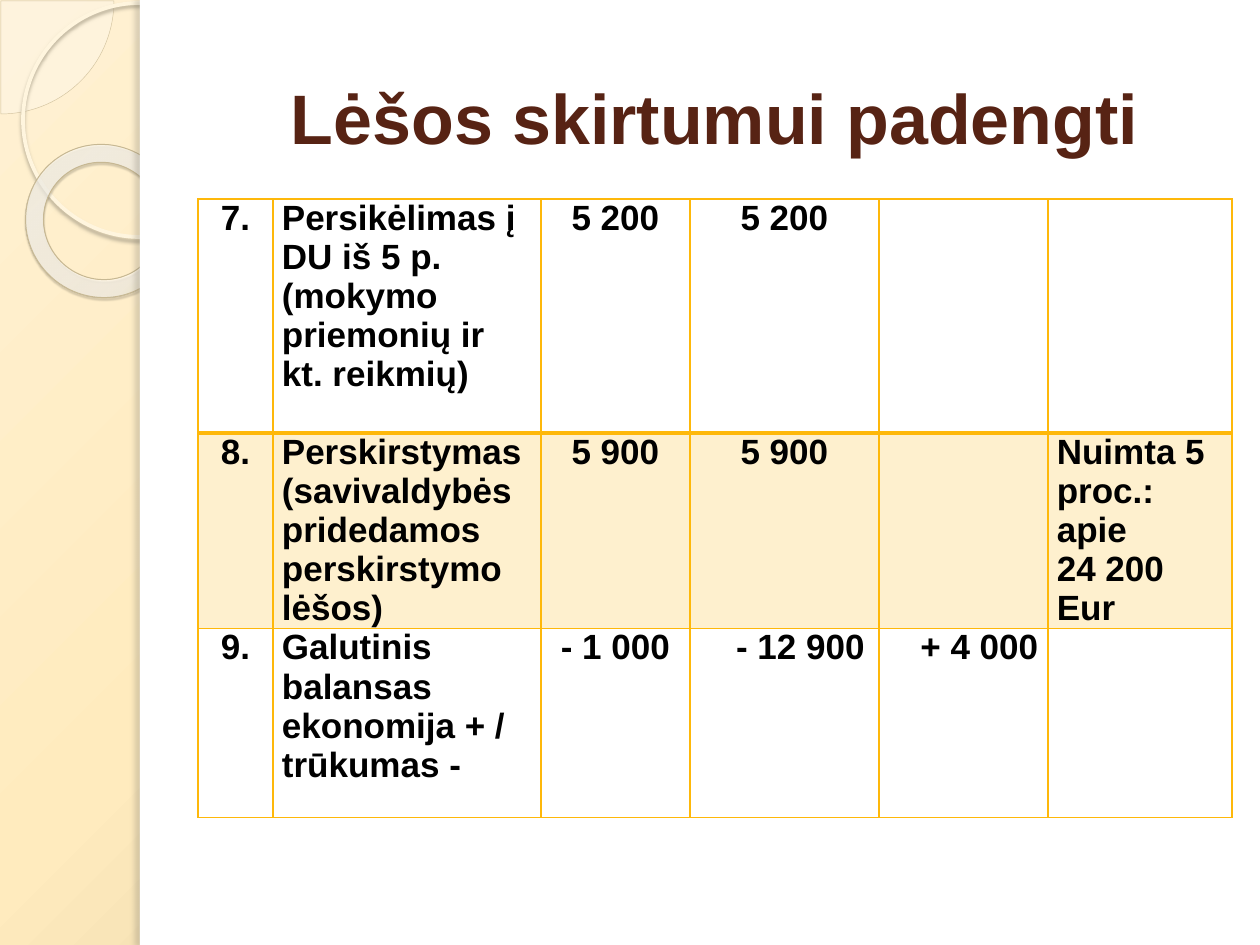
"""Build the slide on funds for covering the shortfall."""
from dataclasses import dataclass
from typing import Optional

from lxml import etree
from pptx import Presentation
from pptx.dml.color import RGBColor
from pptx.enum.shapes import MSO_SHAPE
from pptx.enum.text import MSO_ANCHOR, PP_ALIGN
from pptx.oxml.ns import qn
from pptx.util import Emu, Pt

PIE, OVAL, DONUT, RECT = (MSO_SHAPE.PIE, MSO_SHAPE.OVAL, MSO_SHAPE.DONUT,
                          MSO_SHAPE.RECTANGLE)
LEFT, CENTER = PP_ALIGN.LEFT, PP_ALIGN.CENTER
MIDDLE, TOP = MSO_ANCHOR.MIDDLE, MSO_ANCHOR.TOP
TITLE_ONLY = 5
FONT = "Arial"
COLORS = {
    "title": "572314", "text": "000000", "accent": "FEB80A", "panel": "FFFFFF",
    "pie": "FEFAF4", "pie_line": "D3C39F", "circle": "FFF5DE",
    "circle_shadow": "B0A68F", "ring_line": "C7B893", "ring_shadow": "5A5444",
    "edge_shadow": "736F63", "cream": "FFF1D3", "sand": "FFEBBE",
    "khaki": "C9B484", "ivory": "FFFCF6", "milk": "FFFEFB", "gold": "F0D28E",
}


@dataclass(frozen=True)
class Gradient:
    stops: tuple
    focus: tuple


@dataclass(frozen=True)
class Shadow:
    color: str
    alpha: int
    blur: float
    distance: float
    angle: int


@dataclass(frozen=True)
class Ornament:
    preset: MSO_SHAPE
    box: tuple
    fill: Optional[str] = None
    alpha: int = 100
    line: Optional[str] = None
    weight: float = 0
    rotation: float = 0
    adjustments: tuple = ()
    gradient: Optional[Gradient] = None
    shadow: Optional[Shadow] = None


@dataclass(frozen=True)
class Entry:
    text: str = ""
    align: PP_ALIGN = CENTER
    indent: int = 0


BACKDROP = Gradient((("cream", 0, 100), ("sand", 40, 100), ("khaki", 100, 100)),
                    (-24, -20, 124, 120))
RING = Gradient((("ivory", 0, 70), ("milk", 70, 55), ("gold", 100, 60)),
                (-408, -50, 508, 150))
ORNAMENTS = [
    Ornament(PIE, (-112, -112, 226, 226), "pie", 33, "pie_line", 0.25,
             adjustments=(0, 54.021)),
    Ornament(OVAL, (23, 3, 234, 234), line="circle", weight=2.15,
             shadow=Shadow("circle_shadow", 85, 2, 2, 90)),
    Ornament(DONUT, (25, 145, 155, 152), line="ring_line", weight=0.58,
             rotation=38.6, adjustments=(0.118,), gradient=RING,
             shadow=Shadow("ring_shadow", 35, 1, 1.2, 75)),
    Ornament(RECT, (140, 0, 1120, 945), "panel"),
    Ornament(RECT, (140, 0, 10, 945), "panel",
             shadow=Shadow("edge_shadow", 25, 3, 3, 180)),
]
COLUMNS = (75, 268, 149, 189, 169, 184)
ROW_HEIGHTS = (234, 195, 189)
ROWS = [
    [Entry("7."),
     Entry("Persikėlimas į DU iš 5 p. (mokymo priemonių ir kt. reikmių)", LEFT),
     Entry("5 200"), Entry("5 200"), Entry(), Entry()],
    [Entry("8."),
     Entry("Perskirstymas (savivaldybės pridedamos perskirstymo lėšos)", LEFT),
     Entry("5 900"), Entry("5 900"), Entry(),
     Entry("Nuimta 5 proc.: apie\n24 200 Eur", LEFT)],
    [Entry("9."), Entry("Galutinis balansas ekonomija + / trūkumas -", LEFT),
     Entry("- 1 000"), Entry("- 12 900", indent=32),
     Entry("+ 4 000", indent=32), Entry()],
]


def px(length: int) -> Emu:
    return Emu(round(length * 914400 / 126))


def rgb(name: str) -> RGBColor:
    return RGBColor.from_string(COLORS[name])


def add_color(parent, name: str, alpha: int = 100) -> None:
    color = etree.SubElement(parent, qn("a:srgbClr"), val=COLORS[name])
    if alpha < 100:
        etree.SubElement(color, qn("a:alpha"), val=str(alpha * 1000))


def set_alpha(fill_owner, alpha: int) -> None:
    color = fill_owner.find(qn("a:solidFill")).find(qn("a:srgbClr"))
    etree.SubElement(color, qn("a:alpha"), val=str(alpha * 1000))


def apply_gradient(fill, owner, gradient: Gradient) -> None:
    fill.gradient()
    element = owner.find(".//" + qn("a:gradFill"))
    for child in list(element):
        element.remove(child)
    stops = etree.SubElement(element, qn("a:gsLst"))
    for name, position, alpha in gradient.stops:
        stop = etree.SubElement(stops, qn("a:gs"), pos=str(position * 1000))
        add_color(stop, name, alpha)
    shade = etree.SubElement(element, qn("a:path"), {"path": "circle"})
    sides = {side: str(value * 1000) for side, value in zip("ltrb", gradient.focus)}
    etree.SubElement(shade, qn("a:fillToRect"), sides)


def add_shadow(properties, shadow: Shadow) -> None:
    effects = properties.find(qn("a:effectLst"))
    outer = etree.SubElement(
        effects, qn("a:outerShdw"), blurRad=str(Pt(shadow.blur)),
        dist=str(Pt(shadow.distance)), dir=str(shadow.angle * 60000),
        algn="tl", rotWithShape="0")
    add_color(outer, shadow.color, shadow.alpha)


def draw_ornament(slide, item: Ornament) -> None:
    shape = slide.shapes.add_shape(item.preset, *map(px, item.box))
    shape.rotation = item.rotation
    for index, value in enumerate(item.adjustments):
        shape.adjustments[index] = value
    properties = shape._element.spPr
    if item.gradient:
        apply_gradient(shape.fill, properties, item.gradient)
    elif item.fill:
        shape.fill.solid()
        shape.fill.fore_color.rgb = rgb(item.fill)
        if item.alpha < 100:
            set_alpha(properties, item.alpha)
    else:
        shape.fill.background()
    if item.line:
        shape.line.color.rgb = rgb(item.line)
        shape.line.width = Pt(item.weight)
    else:
        shape.line.fill.background()
    shape.shadow.inherit = False
    if item.shadow:
        add_shadow(properties, item.shadow)


def write(frame, text: str, *, size: int, color: str, align: PP_ALIGN,
          indent: int = 0) -> None:
    frame.text = text
    for paragraph in frame.paragraphs:
        paragraph.alignment = align
        if indent:
            paragraph._p.get_or_add_pPr().set("marL", str(px(indent)))
        font = paragraph.font
        font.name, font.size, font.bold = FONT, Pt(size), True
        font.color.rgb = rgb(color)


def add_border(properties, side: str, weight: float) -> None:
    line = etree.SubElement(properties, qn(f"a:ln{side}"), w=str(Pt(weight)))
    add_color(etree.SubElement(line, qn("a:solidFill")), "accent")


def fill_cell(cell, entry: Entry, row: int) -> None:
    properties = cell._tc.get_or_add_tcPr()
    weights = {"L": 1, "R": 1, "T": 2 if row == 1 else 1, "B": 2 if row == 0 else 1}
    for side, weight in weights.items():
        add_border(properties, side, weight)
    if row == 1:
        cell.fill.solid()
        cell.fill.fore_color.rgb = rgb("accent")
        set_alpha(properties, 20)
    else:
        cell.fill.background()
    cell.margin_left = cell.margin_right = px(9)
    cell.margin_top = cell.margin_bottom = 0
    cell.vertical_anchor = TOP
    write(cell.text_frame, entry.text, size=20, color="text",
          align=entry.align, indent=entry.indent)


def draw_table(slide) -> None:
    table = slide.shapes.add_table(
        len(ROWS), len(COLUMNS), px(198), px(199),
        px(sum(COLUMNS)), px(sum(ROW_HEIGHTS))).table
    table.first_row = table.horz_banding = False
    for column, width in zip(table.columns, COLUMNS):
        column.width = px(width)
    for row, (height, entries) in enumerate(zip(ROW_HEIGHTS, ROWS)):
        table.rows[row].height = px(height)
        for column, entry in enumerate(entries):
            fill_cell(table.cell(row, column), entry, row)


def main() -> None:
    deck = Presentation()
    deck.slide_width, deck.slide_height = px(1260), px(945)
    slide = deck.slides.add_slide(deck.slide_layouts[TITLE_ONLY])
    apply_gradient(slide.background.fill, slide._element, BACKDROP)
    for item in ORNAMENTS:
        draw_ornament(slide, item)
    title = slide.shapes.title
    title.left, title.top, title.width, title.height = map(px, (198, 38, 1033, 157))
    title.text_frame.vertical_anchor = MIDDLE
    write(title.text_frame, "Lėšos skirtumui padengti", size=40, color="title",
          align=CENTER)
    slide.shapes._spTree.append(title._element)
    draw_table(slide)
    deck.save("out.pptx")


if __name__ == "__main__":
    main()
